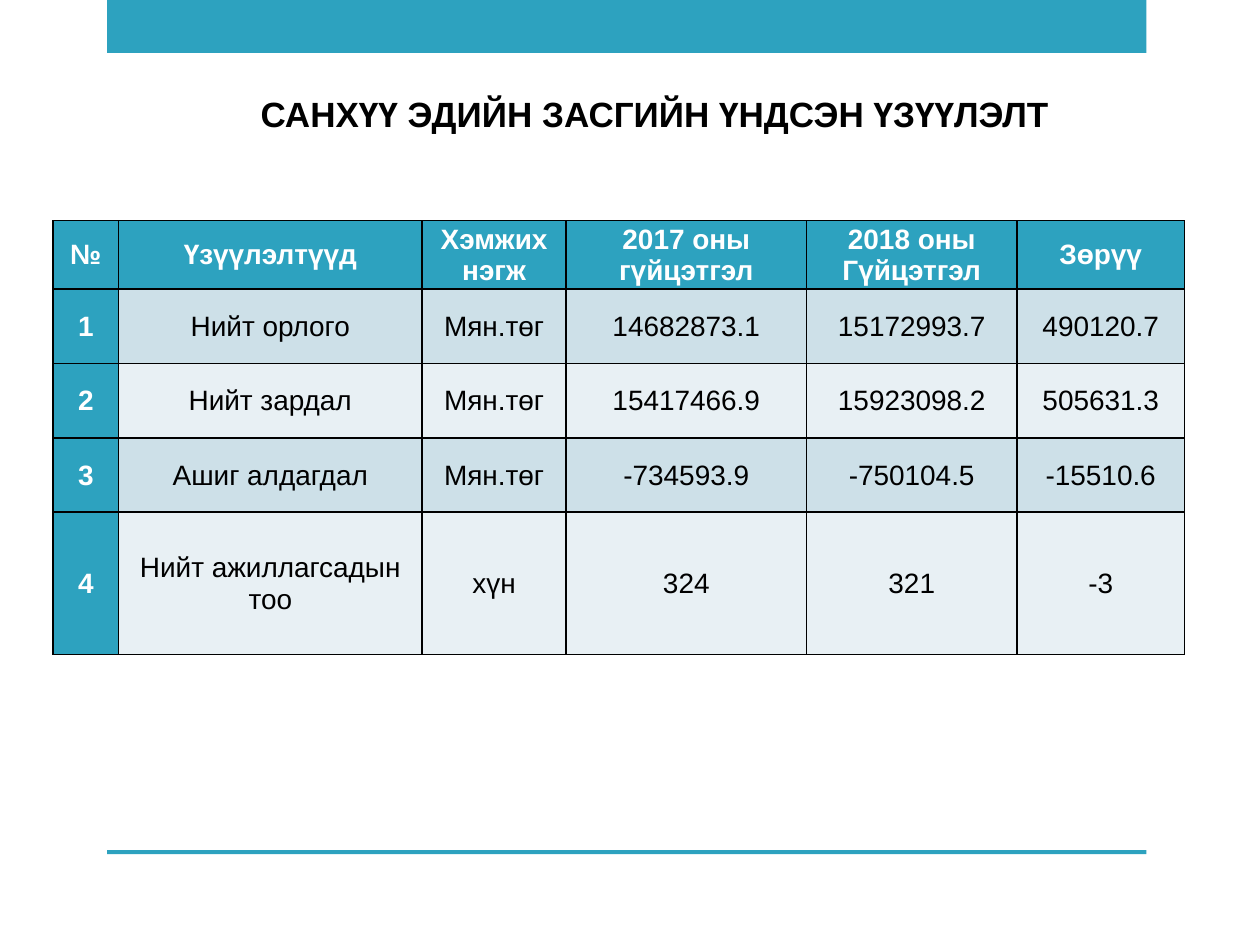
from dataclasses import dataclass

from lxml import etree
from pptx import Presentation
from pptx.dml.color import RGBColor
from pptx.enum.shapes import MSO_SHAPE
from pptx.enum.text import MSO_ANCHOR, PP_ALIGN
from pptx.oxml.ns import qn
from pptx.util import Cm, Pt

RECTANGLE = MSO_SHAPE.RECTANGLE
MIDDLE = MSO_ANCHOR.MIDDLE
CENTER = PP_ALIGN.CENTER

TITLE = "САНХҮҮ ЭДИЙН ЗАСГИЙН ҮНДСЭН ҮЗҮҮЛЭЛТ"
HEADINGS = ["№", "Үзүүлэлтүүд", "Хэмжих нэгж", "2017 оны гүйцэтгэл", "2018 оны Гүйцэтгэл", "Зөрүү"]
INDICATORS = [
    ("Нийт орлого", "Мян.төг", "14682873.1", "15172993.7", "490120.7"),
    ("Нийт зардал", "Мян.төг", "15417466.9", "15923098.2", "505631.3"),
    ("Ашиг алдагдал", "Мян.төг", "-734593.9", "-750104.5", "-15510.6"),
    ("Нийт ажиллагсадын тоо", "хүн", "324", "321", "-3"),
]
COLUMN_WIDTHS = [1.32, 6.12, 2.9, 4.85, 4.24, 3.38]
ROW_HEIGHTS = [1.32, 1.5, 1.5, 1.5, 2.87]
BAND_LEFT, BAND_WIDTH = 2.16, 20.95
BANDS = [(0, 1.07), (17.14, 0.08)]


@dataclass(frozen=True)
class Theme:
    font: str = "Arial"
    title_size: int = 20
    table_size: int = 16
    accent: str = "2DA2BF"
    stripes: tuple = ("CDE0E8", "E8F0F4")
    ink: str = "000000"
    reverse: str = "FFFFFF"
    border: int = 1


THEME = Theme()


def paint(fill, color):
    fill.solid()
    fill.fore_color.rgb = RGBColor.from_string(color)


def write(frame, text, size, color, bold):
    frame.text = text
    frame.word_wrap = True
    paragraph = frame.paragraphs[0]
    paragraph.alignment = CENTER
    font = paragraph.font
    font.name = THEME.font
    font.size = Pt(size)
    font.bold = bold
    font.color.rgb = RGBColor.from_string(color)
    return paragraph


def add_band(slide, top, height):
    band = slide.shapes.add_shape(RECTANGLE, Cm(BAND_LEFT), Cm(top), Cm(BAND_WIDTH), Cm(height))
    paint(band.fill, THEME.accent)
    band.line.fill.background()
    band.shadow.inherit = False


def add_title(slide):
    title = slide.shapes.add_textbox(Cm(2.34), Cm(1.73), Cm(20.45), Cm(1.12))
    title.text_frame.vertical_anchor = MIDDLE
    paragraph = write(title.text_frame, TITLE, THEME.title_size, THEME.ink, True)
    paragraph._p.get_or_add_pPr().set("indent", str(Cm(1.27)))


def add_borders(cell):
    properties = cell._tc.get_or_add_tcPr()
    for position, side in enumerate(("lnL", "lnR", "lnT", "lnB")):
        line = etree.Element(qn(f"a:{side}"), w=str(Pt(THEME.border)))
        fill = etree.SubElement(line, qn("a:solidFill"))
        etree.SubElement(fill, qn("a:srgbClr"), val=THEME.ink)
        properties.insert(position, line)


def add_indicator_table(slide):
    rows = [HEADINGS] + [(str(number), *values) for number, values in enumerate(INDICATORS, 1)]
    table = slide.shapes.add_table(
        len(rows), len(HEADINGS), Cm(1.07), Cm(4.45),
        Cm(sum(COLUMN_WIDTHS)), Cm(sum(ROW_HEIGHTS)),
    ).table
    for column, width in zip(table.columns, COLUMN_WIDTHS):
        column.width = Cm(width)
    for row, height in zip(table.rows, ROW_HEIGHTS):
        row.height = Cm(height)
    for row_index, values in enumerate(rows):
        for column_index, value in enumerate(values):
            cell = table.cell(row_index, column_index)
            heading = row_index == 0 or column_index == 0
            stripe = THEME.stripes[(row_index - 1) % len(THEME.stripes)]
            paint(cell.fill, THEME.accent if heading else stripe)
            cell.vertical_anchor = MIDDLE
            cell.margin_left = cell.margin_right = cell.margin_top = Cm(0.02)
            cell.margin_bottom = 0
            color = THEME.reverse if heading else THEME.ink
            write(cell.text_frame, value, THEME.table_size, color, heading)
            add_borders(cell)


def main():
    deck = Presentation()
    deck.slide_width, deck.slide_height = Cm(25.4), Cm(19.05)
    slide = deck.slides.add_slide(deck.slide_layouts[6])
    for top, height in BANDS:
        add_band(slide, top, height)
    add_title(slide)
    add_indicator_table(slide)
    deck.save("out.pptx")


if __name__ == "__main__":
    main()
